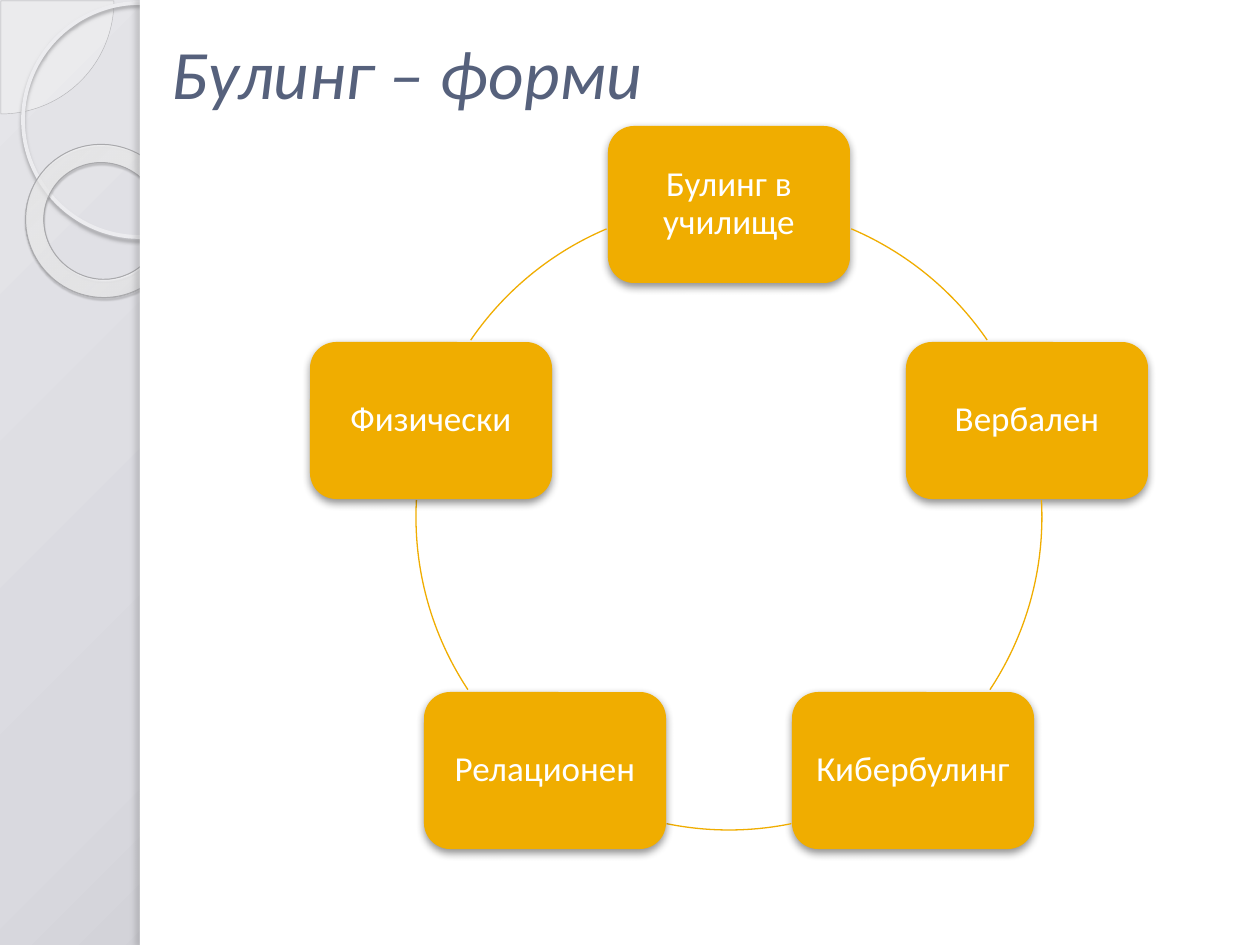
"""Build the slide on forms of bullying: five nodes on a ring."""
from math import cos, radians, sin

from lxml.etree import SubElement
from pptx import Presentation
from pptx.dml.color import RGBColor
from pptx.enum.shapes import MSO_SHAPE as SHAPE
from pptx.enum.text import MSO_ANCHOR as ANCHOR, PP_ALIGN as ALIGN
from pptx.oxml.ns import qn
from pptx.util import Pt

PX = 7257.6
COLORS = {
    "accent": "F0AD00", "white": "FFFFFF", "title": "56617C", "black": "000000",
    "bg_light": "E5E5E9", "bg_mid": "D9D9DF", "bg_dark": "A2A2A7",
    "pie": "F8F8F8", "pie_line": "B5B5B8", "ring": "ECECEF", "ring_shadow": "9C9C9F",
    "donut_in": "FAFAFA", "donut_mid": "FDFDFD", "donut_out": "B9B9BF",
    "donut_line": "A9A9AC", "donut_shadow": "4E4E4F", "edge_shadow": "69696A",
}
NODES = ["Булинг в училище", "Вербален", "Кибербулинг", "Релационен", "Физически"]
ARCS = [(293, 325.6), (356.9, 33.5), (78.5, 101.5), (146.5, 183.1), (214.4, 247)]
CENTER_X, CENTER_Y, RADIUS = 729, 517, 313
NODE_W, NODE_H = 242, 157
DEGREE = 0.6


def px(n):
    """Turn pixels into EMU."""
    return round(n * PX)


def rgb(name):
    """Look up a named colour."""
    return RGBColor.from_string(COLORS[name])


def set_attrs(obj, values):
    """Set attributes from a dict of format values."""
    for name, value in values.items():
        setattr(obj, name, value)


def add_color(parent, name, alpha=100):
    """Append a colour with opacity in percent."""
    clr = SubElement(parent, qn("a:srgbClr"), val=COLORS[name])
    if alpha < 100:
        SubElement(clr, qn("a:alpha"), val=str(alpha * 1000))


def add_gradient(fill, owner, stops, rect):
    """Replace the solid fill of owner with a circular gradient."""
    fill.solid()
    solid = owner.find(qn("a:solidFill"))
    grad = SubElement(owner, qn("a:gradFill"), rotWithShape="1")
    owner.replace(solid, grad)
    gs_lst = SubElement(grad, qn("a:gsLst"))
    for pos, name, alpha in stops:
        add_color(SubElement(gs_lst, qn("a:gs"), pos=str(pos * 1000)), name, alpha)
    circle = SubElement(grad, qn("a:path"), path="circle")
    sides = {side: str(v * 1000) for side, v in zip("ltrb", rect)}
    SubElement(circle, qn("a:fillToRect"), **sides)


def add_shadow(sp, name, alpha, blur, dist, angle):
    """Give a shape an outer shadow."""
    effects = sp._element.spPr.find(qn("a:effectLst"))
    shadow = SubElement(effects, qn("a:outerShdw"), blurRad=str(Pt(blur)),
                        dist=str(Pt(dist)), dir=str(angle * 60000),
                        algn="ctr", rotWithShape="0")
    add_color(shadow, name, alpha)


def add_shape(slide, kind, box, fill=None, alpha=100, line=None, adj=(), shadow=None):
    """Add a preset shape with its fill, line and shadow."""
    sp = slide.shapes.add_shape(kind, *map(px, box))
    for i, value in enumerate(adj):
        sp.adjustments[i] = value
    if fill:
        sp.fill.solid()
        sp.fill.fore_color.rgb = rgb(fill)
        if alpha < 100:
            clr = sp._element.spPr.find(qn("a:solidFill"))[0]
            SubElement(clr, qn("a:alpha"), val=str(alpha * 1000))
    else:
        sp.fill.background()
    if line:
        sp.line.color.rgb, sp.line.width = rgb(line[0]), Pt(line[1])
    else:
        sp.line.fill.background()
    sp.shadow.inherit = False
    if shadow:
        add_shadow(sp, *shadow)
    return sp


def write_text(sp, text, color, frame, para, font):
    """Write one formatted paragraph into a shape."""
    tf = sp.text_frame
    set_attrs(tf, {"word_wrap": True, **frame})
    p = tf.paragraphs[0]
    set_attrs(p, para)
    r = p.add_run()
    r.text = text
    set_attrs(r.font, {"name": "Calibri", **font})
    r.font.color.rgb = rgb(color)


def add_backdrop(slide):
    """Draw the grey side band with its rings and the white page."""
    add_gradient(slide.background.fill, slide._element.find(".//" + qn("p:bgPr")),
                 [(0, "bg_light", 100), (40, "bg_mid", 100), (100, "bg_dark", 100)],
                 (-24, -20, 124, 120))
    add_shape(slide, SHAPE.PIE, (-112, -112, 226, 226), "pie", 33,
              ("pie_line", 0.25), (0, 90 * DEGREE))
    add_shape(slide, SHAPE.OVAL, (23, 3, 234, 234), line=("ring", 2.15),
              shadow=("ring_shadow", 85, 2, 2, 90))
    donut = add_shape(slide, SHAPE.DONUT, (25, 145, 155, 152), line=("donut_line", 0.58),
                      adj=[0.12], shadow=("donut_shadow", 35, 1, 1.2, 75))
    donut.rotation = 38.6
    add_gradient(donut.fill, donut._element.spPr,
                 [(0, "donut_in", 70), (70, "donut_mid", 55), (100, "donut_out", 60)],
                 (-408, -50, 508, 150))
    add_shape(slide, SHAPE.RECTANGLE, (140, 0, 1120, 945), "white")
    add_shape(slide, SHAPE.RECTANGLE, (140, 0, 10, 945), "white",
              shadow=("edge_shadow", 25, 3, 3, 180))


def add_title(slide):
    """Add the slide title."""
    box = slide.shapes.add_textbox(*map(px, (144, 37, 1110, 157)))
    write_text(box, "Булинг – форми", "title",
               {"vertical_anchor": ANCHOR.TOP, "margin_left": px(28), "margin_top": px(9)},
               {"line_spacing": 0.8},
               {"size": Pt(39.6), "italic": True, "bold": False})


def add_node(slide, text, angle):
    """Add a rounded node centred on the ring at an angle."""
    x = CENTER_X + RADIUS * cos(radians(angle))
    y = CENTER_Y + RADIUS * sin(radians(angle))
    box = round(x - NODE_W / 2), round(y - NODE_H / 2), NODE_W, NODE_H
    sp = add_shape(slide, SHAPE.ROUNDED_RECTANGLE, box, "accent",
                   shadow=("black", 43, 5, 2, 90))
    margins = {f"margin_{side}": px(10) for side in ("left", "top", "right", "bottom")}
    write_text(sp, text, "white", {"vertical_anchor": ANCHOR.MIDDLE, **margins},
               {"alignment": ALIGN.CENTER, "line_spacing": 0.9}, {"size": Pt(20)})


def add_arc(slide, start, end):
    """Add the piece of the ring between two angles."""
    box = CENTER_X - RADIUS, CENTER_Y - RADIUS, 2 * RADIUS, 2 * RADIUS
    add_shape(slide, SHAPE.ARC, box, line=("accent", 0.75),
              adj=(start * DEGREE, end * DEGREE))


def main():
    """Build and save the slide."""
    prs = Presentation()
    prs.slide_width, prs.slide_height = px(1260), px(945)
    slide = prs.slides.add_slide(prs.slide_layouts[6])
    add_backdrop(slide)
    add_title(slide)
    for i, (text, arc) in enumerate(zip(NODES, ARCS)):
        add_node(slide, text, i * 360 / len(NODES) - 90)
        add_arc(slide, *arc)
    prs.save("out.pptx")


if __name__ == "__main__":
    main()
